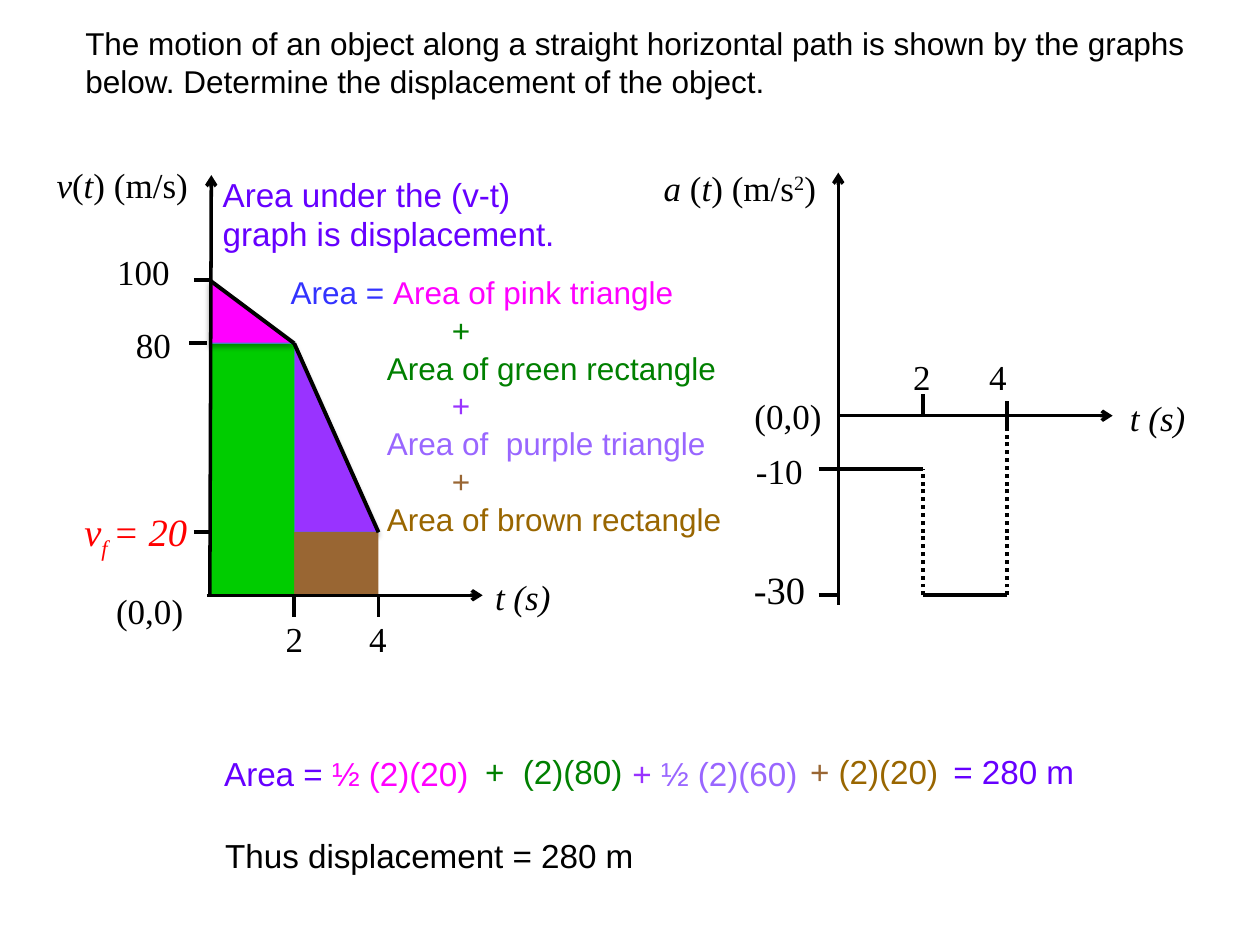
from dataclasses import dataclass

from lxml import etree
from pptx import Presentation
from pptx.dml.color import RGBColor
from pptx.enum.dml import MSO_LINE
from pptx.enum.shapes import MSO_CONNECTOR, MSO_SHAPE
from pptx.enum.text import MSO_AUTO_SIZE
from pptx.oxml.ns import qn
from pptx.util import Cm, Pt

STRAIGHT = MSO_CONNECTOR.STRAIGHT
RECTANGLE = MSO_SHAPE.RECTANGLE
TRIANGLE = MSO_SHAPE.RIGHT_TRIANGLE
DOTTED = MSO_LINE.ROUND_DOT
FIT_SHAPE = MSO_AUTO_SIZE.SHAPE_TO_FIT_TEXT


@dataclass(frozen=True)
class Theme:
    sans: str = "Arial"
    serif: str = "Times New Roman"
    body: int = 18
    working: int = 19
    label: int = 20
    large_label: int = 22
    axis: float = 2
    stroke: float = 2.25
    edge: float = 0.75
    black: str = "000000"
    red: str = "FF0000"
    blue: str = "3333FF"
    violet: str = "6600FF"
    pink: str = "FF00FF"
    purple: str = "9933FF"
    lilac: str = "9966FF"
    green: str = "008000"
    bright_green: str = "00CC00"
    brown: str = "996633"
    ochre: str = "996600"
    outline: str = "4B7EBC"


@dataclass(frozen=True)
class Part:
    """A stretch of text with one look; baseline is a percentage."""
    text: str
    color: str = Theme.black
    italic: bool = False
    baseline: int = 0


class SlideBuilder:
    def __init__(self, slide, theme):
        self.slide = slide
        self.theme = theme

    def _write(self, paragraph, parts, font, size):
        for part in parts:
            run = paragraph.add_run()
            run.text = part.text
            run.font.name = font
            run.font.size = Pt(size)
            run.font.italic = part.italic
            run.font.color.rgb = RGBColor.from_string(part.color)
            if part.baseline:
                run._r.get_or_add_rPr().set("baseline", str(part.baseline * 1000))

    def _box(self, left, top, width, height, wrap):
        box = self.slide.shapes.add_textbox(Cm(left), Cm(top), Cm(width), Cm(height))
        box.text_frame.word_wrap = wrap
        return box.text_frame

    def label(self, left, top, width, *parts, size=None, wrap=True):
        """Serif label of a graph."""
        frame = self._box(left, top, width, 1.2, wrap)
        paragraph = frame.paragraphs[0]
        paragraph.line_spacing = 1.15
        paragraph.space_after = Pt(10)
        self._write(paragraph, parts, self.theme.serif, size or self.theme.label)

    def prose(self, left, top, width, height, lines, size, wrap=True):
        """Sans text; each line is an indent in cm and its parts."""
        frame = self._box(left, top, width, height, wrap)
        frame.auto_size = FIT_SHAPE
        for index, (indent, parts) in enumerate(lines):
            paragraph = frame.add_paragraph() if index else frame.paragraphs[0]
            if indent:
                properties = paragraph._p.get_or_add_pPr()
                properties.set("marL", str(Cm(indent)))
                properties.set("indent", "0")
            self._write(paragraph, parts, self.theme.sans, size)

    def line(self, start, end, width=None, dash=None, arrow=False):
        ends = [Cm(value) for value in (*start, *end)]
        connector = self.slide.shapes.add_connector(STRAIGHT, *ends)
        connector.line.color.rgb = RGBColor.from_string(self.theme.black)
        connector.line.width = Pt(width or self.theme.stroke)
        if dash:
            connector.line.dash_style = dash
        if arrow:
            etree.SubElement(connector.line._get_or_add_ln(), qn("a:tailEnd"), type="arrow")
        etree.SubElement(connector._element.spPr, qn("a:effectLst"))

    def axis(self, start, end):
        self.line(start, end, width=self.theme.axis, arrow=True)

    def area(self, kind, left, top, right, bottom, color):
        shape = self.slide.shapes.add_shape(
            kind, Cm(left), Cm(top), Cm(right - left), Cm(bottom - top))
        shape.shadow.inherit = False
        shape.fill.solid()
        shape.fill.fore_color.rgb = RGBColor.from_string(color)
        if kind == TRIANGLE:
            shape.line.color.rgb = RGBColor.from_string(self.theme.outline)
            shape.line.width = Pt(self.theme.edge)
            self._add_shadow(shape)
        else:
            shape.line.fill.background()

    def _add_shadow(self, shape):
        effects = shape._element.spPr.find(qn("a:effectLst"))
        shadow = etree.SubElement(effects, qn("a:outerShdw"), blurRad=str(Pt(3.1)),
                                  dist=str(Pt(1.8)), dir="5400000", rotWithShape="0")
        color = etree.SubElement(shadow, qn("a:srgbClr"), val=self.theme.black)
        etree.SubElement(color, qn("a:alpha"), val="35000")


SECOND = 0.85
TICK = 0.43


def draw_velocity_graph(page, theme):
    x0, x2, x4 = (4.23 + SECOND * t for t in (0, 2, 4))
    y0, y20, y80, y100 = (12 - 1.27 * v / 20 for v in (0, 20, 80, 100))

    page.area(TRIANGLE, x2, y80, x4, y20, theme.purple)
    page.area(RECTANGLE, x2, y20, x4, y0, theme.brown)
    page.area(RECTANGLE, x0, y80, x2, y0, theme.bright_green)
    page.area(TRIANGLE, x0, y100, x2, y80, theme.pink)

    page.line((x0, y100), (x2, y80))
    page.line((x2, y80), (x4, y20))
    page.axis((x0, y0), (x0 + 0.03, 3.53))
    page.axis((4.17, y0), (9.73, y0))
    for x in (x2, x4):
        page.line((x, y0 + TICK), (x, y0))
    for x, y in ((3.91, y100), (3.81, y80), (3.91, y20)):
        page.line((x, y), (x + 0.36, y))

    page.label(0.89, 3.05, 3.76, Part("v", italic=True), Part("("),
               Part("t", italic=True), Part(") (m/s)"))
    page.label(9.73, 11.35, 1.98, Part("t (s)", italic=True))
    for left, top, width, text in ((2.11, 4.8, 1.96, "100"), (2.49, 6.27, 1.96, "80"),
                                   (2.09, 11.63, 2.36, "(0,0)"),
                                   (5.51, 12.19, 1.12, "2"), (7.19, 12.19, 1.47, "4")):
        page.label(left, top, width, Part(text))
    page.label(1.45, 9.96, 2.59, Part("v", theme.red, True), Part("f ", theme.red, True, -25),
               Part("= 20", theme.red, True), size=theme.large_label, wrap=False)


def draw_acceleration_graph(page, theme):
    x0, x2, x4 = (16.9 + SECOND * t for t in (0, 2, 4))
    y0, y10, y30 = 8.38, 9.45, 12

    page.axis((x0, 12.19), (x0, 3.48))
    page.axis((x0, y0), (22.43, y0))
    page.line((x0, y10), (x2, y10))
    page.line((x2, y30), (x4, y30))
    page.line((x2, y30), (x2, y10), dash=DOTTED)
    page.line((x4, y30), (x4, y0 - 0.2), dash=DOTTED)
    page.line((x2, y0), (x2, y0 - TICK))
    page.line((x4, y0 + 0.23), (x4, y0 - 0.3))
    for y in (y10, y30):
        page.line((x0 - 0.4, y), (x0, y))

    page.label(13.13, 3.1, 4.24, Part("a ", italic=True), Part("("), Part("t", italic=True),
               Part(") (m/s"), Part("2", baseline=30), Part(")"))
    page.label(22.53, 7.75, 1.98, Part("t (s)", italic=True))
    for left, top, width, text in ((14.96, 7.7, 2.4, "(0,0)"), (14.99, 8.81, 1.9, "-10"),
                                   (18.16, 6.91, 1.1, "2"), (19.69, 6.91, 1.27, "4")):
        page.label(left, top, width, Part(text))
    page.label(14.95, 11.15, 1.96, Part("-30"), size=theme.large_label)


def write_solution(page, theme):
    page.prose(4.24, 3.38, 7.5, 1.88,
               [(0, [Part("Area under the (v-t) graph is displacement.", theme.violet)])],
               theme.working)

    term, plus = 2.29, 3.6
    page.prose(5.26, 5.38, 9.78, 6.4, [
        (0.35, [Part("Area = ", theme.blue), Part("Area of pink triangle", theme.pink)]),
        (plus, [Part("+", theme.green)]),
        (term, [Part("Area of green rectangle", theme.green)]),
        (plus, [Part("+", theme.purple)]),
        (term, [Part("Area of  purple triangle", theme.lilac)]),
        (plus, [Part("+", theme.brown)]),
        (term, [Part("Area of brown rectangle", theme.ochre)]),
    ], theme.body)

    sum_terms = (
        (4.27, 15.06, 5.46, [Part("Area = ", theme.violet), Part("½ (2)(20)", theme.pink)]),
        (9.53, 15.02, 3.33, [Part("+  (2)(80)", theme.green)]),
        (12.5, 15.06, 3.89, [Part("+ ", theme.purple), Part("½ (2)(60)", theme.lilac)]),
        (16.08, 15.02, 3.15, [Part("+ ", theme.brown), Part("(2)(20)", theme.ochre)]),
        (18.97, 15.02, 2.97, [Part("= 280 m", theme.violet)]),
    )
    for index, (left, top, width, parts) in enumerate(sum_terms):
        page.prose(left, top, width, 1.07, [(0, parts)], theme.working, wrap=index == 0)
    page.prose(4.29, 16.71, 12.7, 1.07, [(0, [Part("Thus displacement = 280 m")])], theme.working)


def main():
    theme = Theme()
    deck = Presentation()
    deck.slide_width, deck.slide_height = Cm(25.4), Cm(19.05)
    page = SlideBuilder(deck.slides.add_slide(deck.slide_layouts[6]), theme)
    question = ("The motion of an object along a straight horizontal path is shown by the "
                "graphs below. Determine the displacement of the object.")
    page.prose(1.47, 0.36, 23.06, 1.8, [(0, [Part(question)])], theme.body)
    draw_velocity_graph(page, theme)
    draw_acceleration_graph(page, theme)
    write_solution(page, theme)
    deck.save("out.pptx")


if __name__ == "__main__":
    main()
